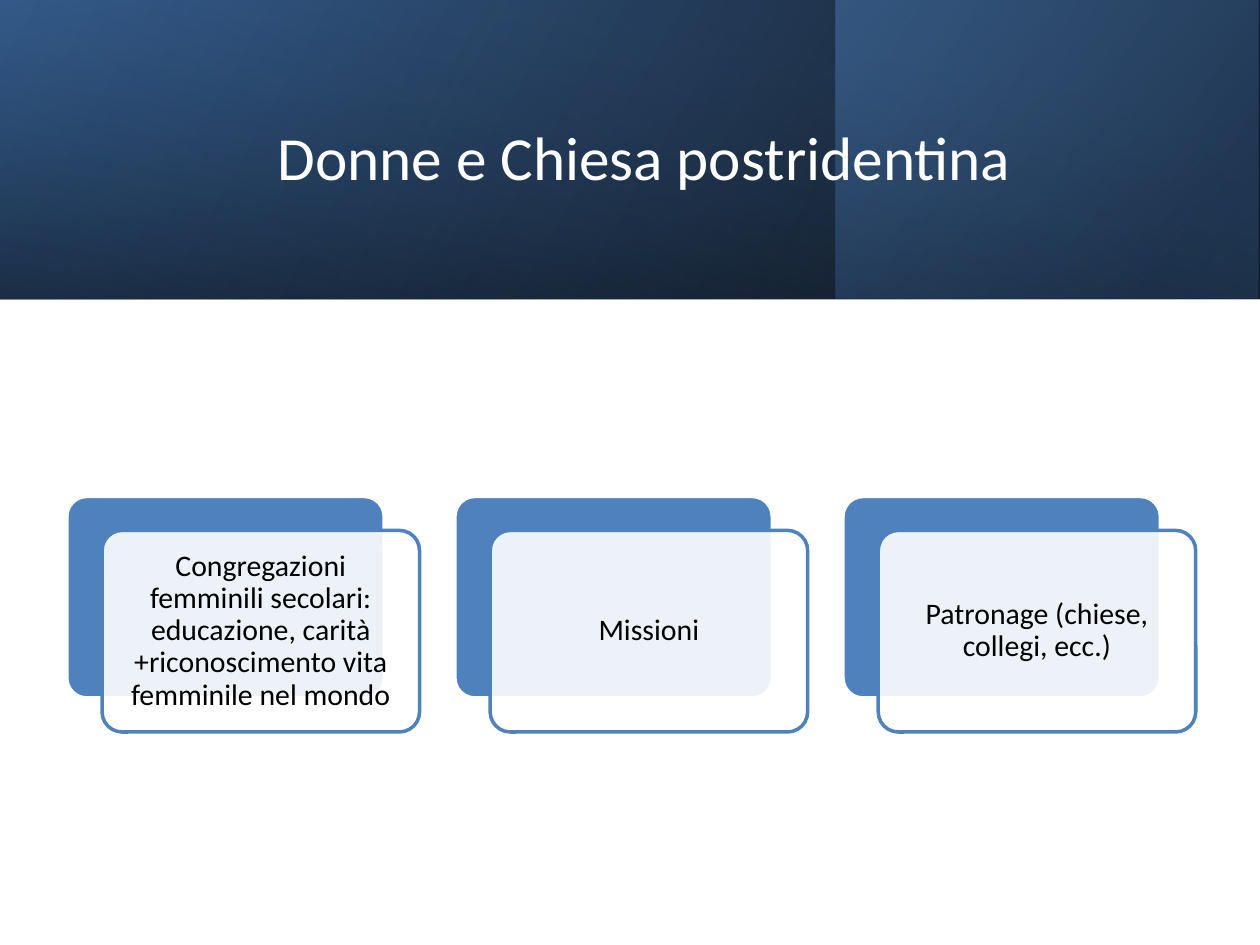
from pptx import Presentation
from pptx.dml.color import RGBColor
from pptx.enum.shapes import MSO_SHAPE
from pptx.enum.text import MSO_ANCHOR, PP_ALIGN
from pptx.oxml import parse_xml
from pptx.oxml.ns import nsdecls, qn
from pptx.util import Inches, Pt

RECT, ROUND = MSO_SHAPE.RECTANGLE, MSO_SHAPE.ROUNDED_RECTANGLE
CENTER, MIDDLE = PP_ALIGN.CENTER, MSO_ANCHOR.MIDDLE
TITLE_ONLY = 5

COLORS = {
    "white": "FFFFFF",
    "black": "000000",
    "blue": "4F81BD",
    "deep": "376092",
    "navy": "254061",
}
COLS, ROWS = 100, 75  # grid over the slide

# box, rotation, gradient angle, stops as (position, colour, opacity)
BANDS = [
    ((0, 0, 100, 23.7), 0, 330, [(0, "black", 96), (100, "deep", 100)]),
    ((66.3, 0, 33.6, 23.7), 0, 320, [(19, "navy", 68), (100, "blue", 48)]),
    ((38.1, -38.1, 23.7, 100), 270, 350, [(23, "deep", 16), (99, "black", 45)]),
]
TOPICS = [
    "Congregazioni femminili secolari: educazione, carità "
    "+riconoscimento vita femminile nel mondo",
    "Missioni",
    "Patronage (chiese, collegi, ecc.)",
]
CARD_LEFT, CARD_TOP, CARD_PITCH = 5.3, 39.4, 30.8
CARD_W, CARD_H = 25.2, 16
SHIFT_X, SHIFT_Y = 2.8, 2.7


def rgb(name):
    return RGBColor.from_string(COLORS[name])


class Deck:
    font = "Calibri"

    def __init__(self):
        self.prs = Presentation()
        self.prs.slide_width, self.prs.slide_height = Inches(10), Inches(7.5)
        self.s = self.prs.slides.add_slide(self.prs.slide_layouts[TITLE_ONLY])

    def box(self, left, top, width, height):
        """Turn grid columns and rows into slide lengths."""
        col, row = self.prs.slide_width / COLS, self.prs.slide_height / ROWS
        return [int(v) for v in (left * col, top * row, width * col, height * row)]

    def shape(self, kind, box):
        sp = self.s.shapes.add_shape(kind, *self.box(*box))
        sp.shadow.inherit = False
        return sp

    def set_text(self, tf, text, size, color, spacing=None):
        frame = {"word_wrap": True, "vertical_anchor": MIDDLE, "text": text}
        for name, value in frame.items():
            setattr(tf, name, value)
        p = tf.paragraphs[0]
        p.alignment, p.line_spacing = CENTER, spacing
        font = p.runs[0].font
        for name, value in {"name": self.font, "size": Pt(size), "bold": False}.items():
            setattr(font, name, value)
        font.color.rgb = rgb(color)

    def band(self, box, rotation, angle, stops):
        """Mirrored rectangle with a see-through gradient."""
        sp = self.shape(RECT, box)
        sp.rotation = rotation
        sp.line.fill.background()
        sp.fill.background()
        props = sp._element.spPr
        props.find(qn("a:xfrm")).set("flipH", "1")
        marks = "".join(
            f'<a:gs pos="{pos * 1000}"><a:srgbClr val="{COLORS[color]}">'
            f'<a:alpha val="{alpha * 1000}"/></a:srgbClr></a:gs>'
            for pos, color, alpha in stops
        )
        gradient = parse_xml(
            f'<a:gradFill {nsdecls("a")} rotWithShape="1"><a:gsLst>{marks}</a:gsLst>'
            f'<a:lin ang="{angle * 60000}" scaled="0"/></a:gradFill>'
        )
        props.replace(props.find(qn("a:noFill")), gradient)

    def title(self, text, box):
        sp = self.s.shapes.title
        sp.left, sp.top, sp.width, sp.height = self.box(*box)
        self.set_text(sp.text_frame, text, 35, "white")
        self.s.shapes._spTree.append(sp._element)  # in front of the bands

    def panel(self, box, fill, line, opacity=100):
        sp = self.shape(ROUND, box)
        sp.adjustments[0] = 0.1
        sp.fill.solid()
        sp.fill.fore_color.rgb = rgb(fill)
        sp.line.color.rgb = rgb(line)
        sp.line.width = Pt(2)
        if opacity < 100:
            color = sp._element.spPr.find(qn("a:solidFill"))[0]
            color.append(parse_xml(
                f'<a:alpha {nsdecls("a")} val="{opacity * 1000}"/>'))
        return sp

    def card(self, left, top, text):
        """Blue panel with a pale text panel shifted over it."""
        self.panel((left, top, CARD_W, CARD_H), "blue", "white")
        front = self.panel((left + SHIFT_X, top + SHIFT_Y, CARD_W, CARD_H),
                           "white", "blue", opacity=90)
        tf = front.text_frame
        for side in ("left", "top", "right", "bottom"):
            setattr(tf, f"margin_{side}", Inches(0.1))
        self.set_text(tf, text, 17, "black", spacing=0.9)


def main():
    deck = Deck()
    for band in BANDS:
        deck.band(*band)
    deck.title("Donne e Chiesa postridentina", (11.3, 3.8, 79.7, 17.2))
    for i, topic in enumerate(TOPICS):
        deck.card(CARD_LEFT + i * CARD_PITCH, CARD_TOP, topic)
    deck.prs.save("out.pptx")


if __name__ == "__main__":
    main()
